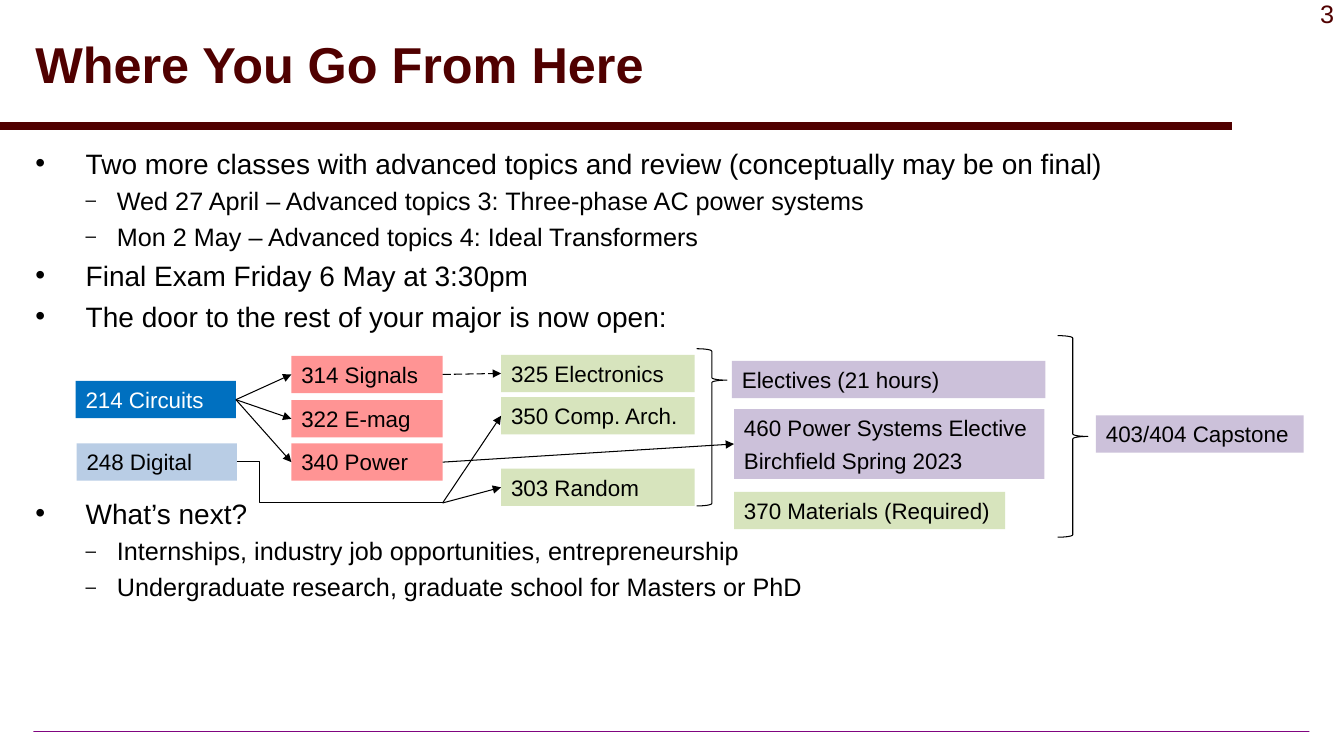
"""Build the slide that maps the courses following this class."""
from typing import NamedTuple, Optional

from lxml import etree
from pptx import Presentation
from pptx import util as u
from pptx.dml.color import RGBColor
from pptx.enum import dml, shapes, text
from pptx.oxml.ns import qn

PX = 9144
FONT = "Arial"
MAROON, BLACK, WHITE = "500000", "000000", "FFFFFF"
BLUE, PALE_BLUE, RED = "0070C0", "B9CDE5", "FF9494"
GREEN, PURPLE = "D7E4BD", "CCC1DA"
LEFT, RIGHT = 1, 3
ROW = 37
JUNCTION = (439, 499)


class Course(NamedTuple):
    """A labelled course box."""
    label: str
    left: int
    top: int
    width: int
    fill: str
    height: int = ROW
    color: str = BLACK


class Arrow(NamedTuple):
    """An arrow to a course, from another course or from the junction."""
    target: str
    source: Optional[str] = None
    dashed: bool = False


class Brace(NamedTuple):
    """A right brace with the position of its point."""
    left: int
    top: int
    height: int
    point: float


class Item(NamedTuple):
    """A list entry with its level and space before in points."""
    label: str
    level: int = 0
    before: int = 5


COURSES = [
    Course("214 Circuits", 75, 378, 159, BLUE, color=WHITE),
    Course("248 Digital", 76, 440, 159, PALE_BLUE),
    Course("314 Signals", 289, 353, 150, RED),
    Course("322 E-mag", 289, 397, 150, RED),
    Course("340 Power", 289, 440, 150, RED),
    Course("303 Random", 497, 465, 192, GREEN),
    Course("325 Electronics", 497, 352, 192, GREEN),
    Course("350 Comp. Arch.", 497, 394, 192, GREEN),
    Course("370 Materials (Required)", 728, 488, 269, GREEN),
    Course("460 Power Systems Elective\nBirchfield Spring 2023", 728, 406, 308, PURPLE, 69),
    Course("Electives (21 hours)", 726, 358, 311, PURPLE),
    Course("403/404 Capstone", 1087, 412, 206, PURPLE),
]
ARROWS = [
    Arrow("314", "214"),
    Arrow("322", "214"),
    Arrow("340", "214"),
    Arrow("303"),
    Arrow("350"),
    Arrow("325", "314", dashed=True),
    Arrow("460", "340"),
]
BRACES = [Brace(1049, 333, 200, 0.5), Brace(691, 346, 156, 0.2)]
ITEMS = [
    Item("Two more classes with advanced topics and review (conceptually may be on final)", before=0),
    Item("Wed 27 April – Advanced topics 3: Three-phase AC power systems", 1, 4),
    Item("Mon 2 May – Advanced topics 4: Ideal Transformers", 1, 4),
    Item("Final Exam Friday 6 May at 3:30pm"),
    Item("The door to the rest of your major is now open:"),
    Item("What’s next?", before=117),
    Item("Internships, industry job opportunities, entrepreneurship", 1, 4),
    Item("Undergraduate research, graduate school for Masters or PhD", 1, 4),
]


def px(*lengths: int) -> list:
    """Turn px into EMU."""
    return [u.Emu(length * PX) for length in lengths]


def rgb(value: str) -> RGBColor:
    """Turn a hex string into a colour."""
    return RGBColor.from_string(value)


def place(shape, left: int, top: int, width: int, height: int) -> None:
    """Move and size a shape."""
    shape.left, shape.top, shape.width, shape.height = px(left, top, width, height)


def style(para, size: int, color: str, bold: bool = False) -> None:
    """Format the runs of a paragraph."""
    for span in para.runs:
        span.font.name, span.font.size, span.font.bold = FONT, u.Pt(size), bold
        span.font.color.rgb = rgb(color)


def add_bullet(para, level: int) -> None:
    """Give a paragraph its indent and bullet."""
    margin, hang, mark, percent = [(50, 50, "•", 100), (81, 31, "–", 75)][level]
    props = para._p.get_or_add_pPr()
    props.set("marL", str(margin * PX))
    props.set("indent", str(-hang * PX))
    color = etree.SubElement(props, qn("a:buClr"))
    etree.SubElement(color, qn("a:srgbClr"), val=BLACK)
    etree.SubElement(props, qn("a:buSzPct"), val=str(percent * 1000))
    etree.SubElement(props, qn("a:buFont"), typeface=FONT)
    etree.SubElement(props, qn("a:buChar"), char=mark)


def add_frame(page) -> None:
    """Draw the rules, page number, title and list."""
    add_line(page, (0, 125), (1222, 125), MAROON, 6)
    footer = page.shapes.add_shape(shapes.MSO_SHAPE.RECTANGLE, *px(33, 725, 1266, 1))
    footer.shadow.inherit = False
    footer.line.fill.background()
    footer.fill.gradient()
    for stop, color in zip(footer.fill.gradient_stops, ("800080", "E7E1E7")):
        stop.color.rgb = rgb(color)
    gradient = footer._element.spPr.find(qn("a:gradFill"))
    linear = gradient.find(qn("a:lin"))
    shade = etree.Element(qn("a:path"), path="shape")
    etree.SubElement(shade, qn("a:fillToRect"), l="50000", t="50000", r="50000", b="50000")
    gradient.replace(linear, shade)

    number = page.shapes.add_textbox(*px(1213, -7, 120, 40)).text_frame
    number.word_wrap = True
    number.text = "3"
    number.paragraphs[0].alignment = text.PP_ALIGN.RIGHT
    style(number.paragraphs[0], 18, MAROON)

    title, body = page.shapes.title, page.placeholders[1]
    place(title, 25, 8, 1192, 117)
    title.text_frame.text = "Where You Go From Here"
    title.text_frame.vertical_anchor = text.MSO_ANCHOR.MIDDLE
    heading = title.text_frame.paragraphs[0]
    heading.alignment, heading.line_spacing = text.PP_ALIGN.LEFT, 0.9
    style(heading, 36, MAROON, bold=True)

    place(body, 25, 140, 1192, 568)
    body.text_frame.auto_size = text.MSO_AUTO_SIZE.NONE
    body.text_frame.text = "\n".join(item.label for item in ITEMS)
    for para, item in zip(body.text_frame.paragraphs, ITEMS):
        para.level = item.level
        para.space_before = u.Pt(item.before)
        add_bullet(para, item.level)
        style(para, 20 - 2 * item.level, BLACK)


def add_course(page, course: Course):
    """Draw a course box."""
    box = page.shapes.add_shape(shapes.MSO_SHAPE.RECTANGLE,
                                *px(course.left, course.top, course.width, course.height))
    box.shadow.inherit = False
    box.fill.solid()
    box.fill.fore_color.rgb = rgb(course.fill)
    box.line.fill.background()
    box.text_frame.vertical_anchor = text.MSO_ANCHOR.TOP
    box.text_frame.text = course.label
    for index, para in enumerate(box.text_frame.paragraphs):
        para.alignment = text.PP_ALIGN.LEFT
        para.space_before = u.Pt(4 if index else 0)
        style(para, 16, course.color)
    return box


def add_line(page, start: tuple, end: tuple, color: str = BLACK, width: float = 0.75,
             kind=shapes.MSO_CONNECTOR.STRAIGHT):
    """Draw a connector without a shadow."""
    line = page.shapes.add_connector(kind, *px(*start, *end))
    line.line.color.rgb = rgb(color)
    line.line.width = u.Pt(width)
    etree.SubElement(line._element.spPr, qn("a:effectLst"))
    return line


def add_arrow(page, arrow: Arrow, boxes: dict) -> None:
    """Draw an arrow joined to its boxes."""
    line = add_line(page, JUNCTION, JUNCTION)
    if arrow.source:
        line.begin_connect(boxes[arrow.source], RIGHT)
    line.end_connect(boxes[arrow.target], LEFT)
    if arrow.dashed:
        line.line.dash_style = dml.MSO_LINE.LONG_DASH
    etree.SubElement(line._element.spPr.find(qn("a:ln")), qn("a:tailEnd"), type="triangle")


def add_brace(page, brace: Brace) -> None:
    """Draw a right brace."""
    shape = page.shapes.add_shape(shapes.MSO_SHAPE.RIGHT_BRACE,
                                  *px(brace.left, brace.top, 30, brace.height))
    shape.shadow.inherit = False
    shape.fill.background()
    shape.line.color.rgb = rgb(BLACK)
    shape.line.width = u.Pt(0.75)
    shape.adjustments[0], shape.adjustments[1] = 0.08, brace.point


def main() -> None:
    """Build and save the deck."""
    deck = Presentation()
    deck.slide_width, deck.slide_height = px(1333, 750)
    page = deck.slides.add_slide(deck.slide_layouts[1])
    add_frame(page)
    boxes = {course.label.split()[0]: add_course(page, course) for course in COURSES}
    for arrow in ARROWS:
        add_arrow(page, arrow, boxes)
    elbow = add_line(page, (235, 458), JUNCTION, kind=shapes.MSO_CONNECTOR.ELBOW)
    guides = elbow._element.spPr.find(qn("a:prstGeom")).get_or_add_avLst()
    etree.SubElement(guides, qn("a:gd"), name="adj1", fmla="val 11000")
    for brace in BRACES:
        add_brace(page, brace)
    deck.save("out.pptx")


if __name__ == "__main__":
    main()
